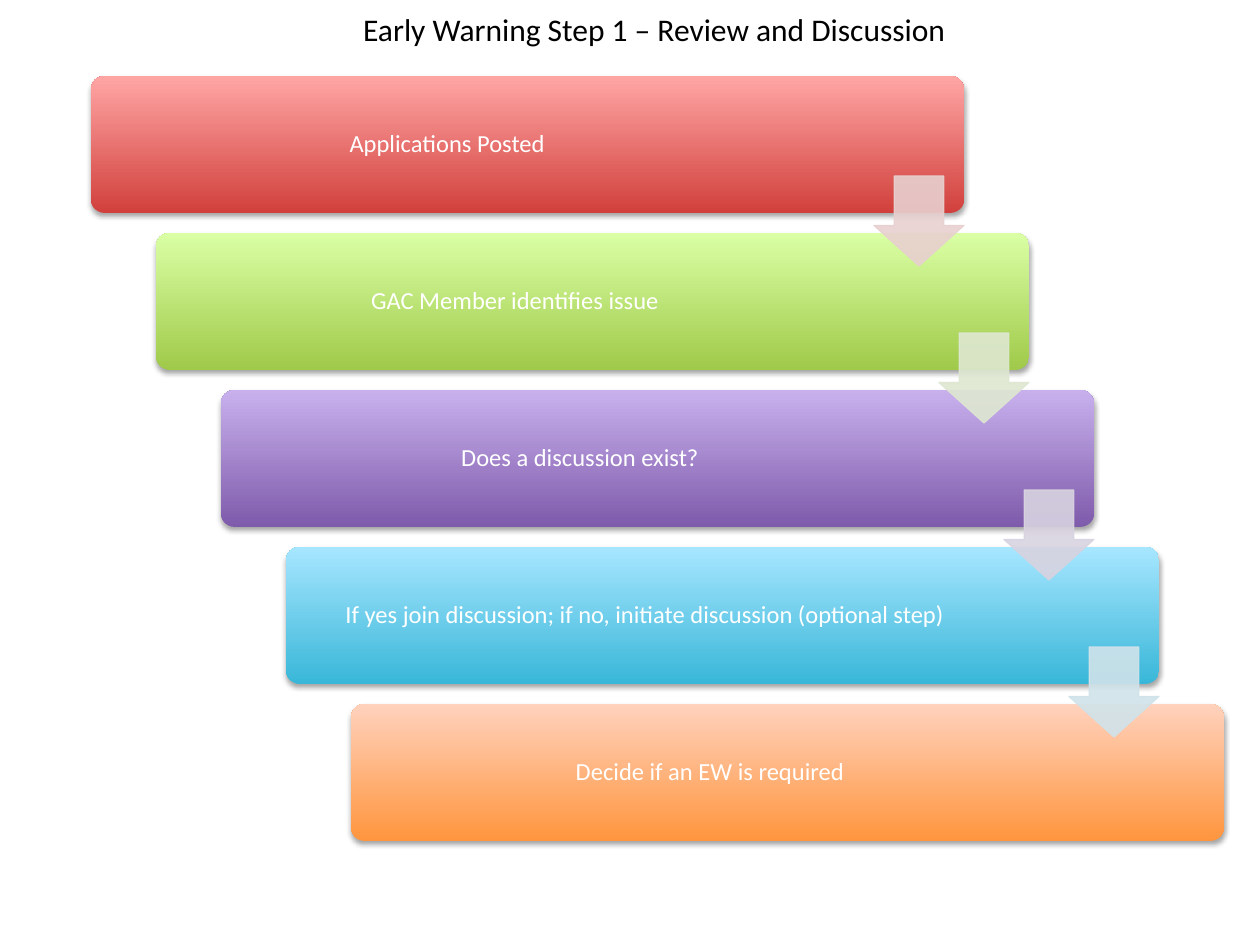
from dataclasses import dataclass

from lxml import etree
from pptx import Presentation
from pptx import util as u
from pptx.dml.color import RGBColor
from pptx.enum import shapes, text
from pptx.oxml import ns

PX_PER_INCH = 126


@dataclass(frozen=True)
class Theme:
    font: str = "Calibri"
    title_size: int = 18
    step_size: int = 14
    title_color: str = "000000"
    step_color: str = "FFFFFF"
    shadow_color: str = "000000"
    shadow_alpha: int = 35
    arrow_alpha: int = 90


@dataclass(frozen=True)
class Step:
    label: str
    bottom_color: str
    top_color: str
    arrow_color: str | None = None


@dataclass(frozen=True)
class Staircase:
    left: int = 91
    top: int = 76
    width: int = 873
    height: int = 137
    shift_x: int = 65
    shift_y: int = 157
    arrow_size: int = 90
    arrow_drop: int = 100


THEME = Theme()
STAIRS = Staircase()
STEPS = [
    Step("Applications Posted ", "D1403C", "FFA6A5", "E8D0D0"),
    Step("GAC Member identifies issue", "A0CA4A", "DAFFA5", "DEE7D1"),
    Step("Does a discussion exist?", "7F5BAB", "C8B0ED", "D8D3E0"),
    Step("If yes join discussion; if no, initiate discussion (optional step)",
         "39B7D8", "A7E6FF", "D0E3EA"),
    Step("Decide if an EW is required", "FF953E", "FFD2BD"),
]


def px(length: int) -> u.Emu:
    return u.Emu(round(length * u.Inches(1) / PX_PER_INCH))


def color(code: str) -> RGBColor:
    return RGBColor.from_string(code)


def set_alpha(parent, percent: int) -> None:
    """Make every RGB colour below the element partly transparent."""
    for node in parent.iter(ns.qn("a:srgbClr")):
        etree.SubElement(node, ns.qn("a:alpha"), val=str(percent * 1000))


def add_soft_shadow(shape) -> None:
    shape.shadow.inherit = False
    effects = shape._element.spPr.find(ns.qn("a:effectLst"))
    shadow = etree.SubElement(
        effects, ns.qn("a:outerShdw"), blurRad=str(u.Pt(3.1)),
        dist=str(u.Pt(1.8)), dir="5400000", rotWithShape="0")
    etree.SubElement(shadow, ns.qn("a:srgbClr"), val=THEME.shadow_color)
    set_alpha(shadow, THEME.shadow_alpha)


def write_centred(frame, words: str, size: int, ink: str) -> None:
    frame.text = words
    frame.word_wrap = True
    frame.vertical_anchor = text.MSO_ANCHOR.MIDDLE
    para = frame.paragraphs[0]
    para.alignment = text.PP_ALIGN.CENTER
    para.font.name = THEME.font
    para.font.size = u.Pt(size)
    para.font.color.rgb = color(ink)


def set_title(page, words: str) -> None:
    title = page.shapes.title
    title.left, title.top = px(273), px(3)
    title.width, title.height = px(770), px(51)
    write_centred(title.text_frame, words, THEME.title_size, THEME.title_color)


def add_step(page, step: Step, index: int) -> None:
    box = page.shapes.add_shape(
        shapes.MSO_SHAPE.ROUNDED_RECTANGLE,
        px(STAIRS.left + index * STAIRS.shift_x),
        px(STAIRS.top + index * STAIRS.shift_y),
        px(STAIRS.width), px(STAIRS.height))
    box.adjustments[0] = 0.1
    box.fill.gradient()
    box.fill.gradient_angle = 90
    for stop, code in zip(box.fill.gradient_stops,
                          (step.bottom_color, step.top_color)):
        stop.color.rgb = color(code)
    box.line.fill.background()
    add_soft_shadow(box)

    frame = box.text_frame
    write_centred(frame, step.label, THEME.step_size, THEME.step_color)
    frame.paragraphs[0].line_spacing = 0.9
    frame.margin_left = frame.margin_top = frame.margin_bottom = px(8)
    frame.margin_right = px(163)  # keeps the label clear of the arrows


def add_arrow(page, code: str, index: int) -> None:
    """Draw the arrow from the step at index down to the next one."""
    right = STAIRS.left + index * STAIRS.shift_x + STAIRS.width
    top = STAIRS.top + index * STAIRS.shift_y + STAIRS.arrow_drop
    arrow = page.shapes.add_shape(
        shapes.MSO_SHAPE.DOWN_ARROW, px(right - STAIRS.arrow_size), px(top),
        px(STAIRS.arrow_size), px(STAIRS.arrow_size))
    arrow.adjustments[0] = 0.55
    arrow.adjustments[1] = 0.45
    arrow.shadow.inherit = False
    arrow.fill.solid()
    arrow.fill.fore_color.rgb = color(code)
    arrow.line.color.rgb = color(code)
    arrow.line.width = u.Pt(0.75)
    set_alpha(arrow._element.spPr, THEME.arrow_alpha)


def main() -> None:
    deck = Presentation()
    deck.slide_width, deck.slide_height = px(1260), px(945)
    page = deck.slides.add_slide(deck.slide_layouts.get_by_name("Title Only"))
    set_title(page, "Early Warning Step 1 – Review and Discussion ")
    for index, step in enumerate(STEPS):
        add_step(page, step, index)
    for index, step in enumerate(STEPS):
        if step.arrow_color:
            add_arrow(page, step.arrow_color, index)
    deck.save("out.pptx")


if __name__ == "__main__":
    main()
